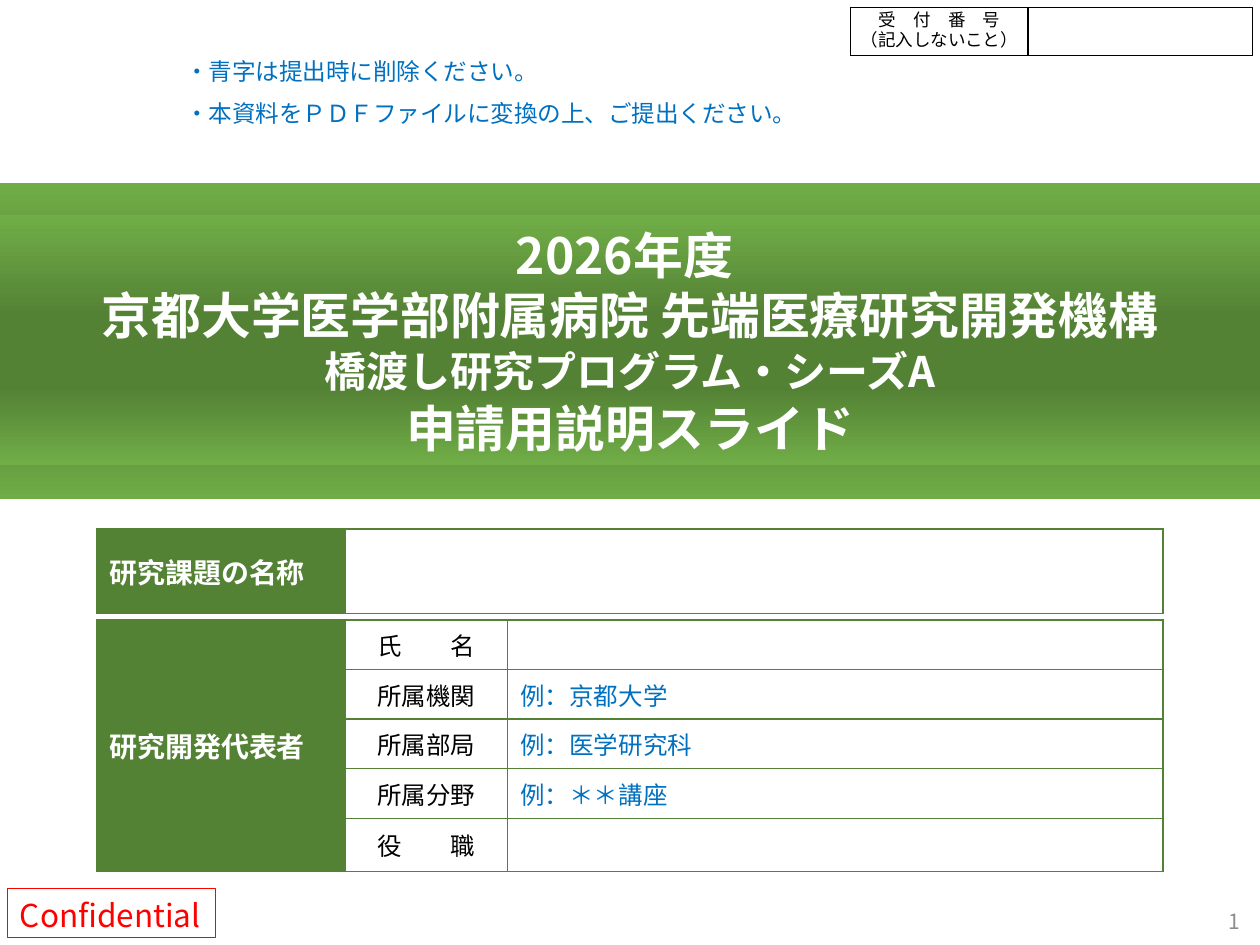
import dataclasses
import lxml.etree
import pptx
import pptx.dml.color
import pptx.enum.shapes
import pptx.enum.text
import pptx.oxml.ns
import pptx.util

ALIGN = pptx.enum.text.PP_ALIGN
MID = pptx.enum.text.MSO_ANCHOR.MIDDLE
TOP = pptx.enum.text.MSO_ANCHOR.TOP
FIXED = pptx.enum.text.MSO_AUTO_SIZE.NONE
BOX = pptx.enum.shapes.MSO_SHAPE.RECTANGLE
NOTO = "Noto Sans CJK JP"
GREEN, LEAF, BLUE = "548235", "70AD47", "0070C0"
WHITE, BLACK, RED, GREY = "FFFFFF", "000000", "FF0000", "8C8C8C"
FADE = [(0, LEAF), (40, GREEN), (69, GREEN), (100, LEAF)]


def tint(code):
    return pptx.dml.color.RGBColor.from_string(code)


def tag(name):
    return pptx.oxml.ns.qn("a:" + name)


def child(node, name, **attrs):
    return lxml.etree.SubElement(node, tag(name), **attrs)


def apply(item, values):
    for key, value in values.items():
        setattr(item, key, value)


def inset(side, top, base=None):
    low = top if base is None else base
    keys = ("margin_left", "margin_right", "margin_top", "margin_bottom")
    sizes = (side, side, top, low)
    return {key: pptx.util.Inches(size) for key, size in zip(keys, sizes)}


@dataclasses.dataclass
class Deck:
    """Draws styled parts on a slide, on a grid of 100 columns by 75 rows."""
    slide: object
    unit: int
    font: str = NOTO

    def span(self, count):
        return round(count * self.unit)

    def place(self, shape, spot):
        keys = ("left", "top", "width", "height")
        apply(shape, dict(zip(keys, map(self.span, spot))))

    def style(self, run, size, color, bold=False, font=None):
        face = font or self.font
        apply(run.font, {"size": pptx.util.Pt(size), "bold": bold, "name": face})
        run.font.color.rgb = tint(color)
        child(run.font._element, "ea", typeface=face)

    def letter(self, frame, lines, look, align=ALIGN.LEFT, lead=None, sizes=()):
        sizes = sizes or [look["size"]] * len(lines)
        for i, (line, size) in enumerate(zip(lines, sizes)):
            para = frame.add_paragraph() if i else frame.paragraphs[0]
            gap = pptx.util.Pt(round(size * lead, 1)) if lead else 1.0
            apply(para, {"alignment": align, "line_spacing": gap,
                         "space_before": 0, "space_after": 0})
            run = para.add_run()
            run.text = line
            self.style(run, **{**look, "size": size})

    def frame(self, shape, wrap, pad, anchor=MID):
        apply(shape.text_frame, {"word_wrap": wrap, "auto_size": FIXED,
                                 "vertical_anchor": anchor, **pad})
        return shape.text_frame

    def fade(self, shape):
        shape.fill.gradient()
        shape.fill.gradient_angle = 270
        stops = next(shape.element.iter(tag("gsLst")))
        stops.clear()
        for share, code in FADE:
            child(child(stops, "gs", pos=str(share * 1000)), "srgbClr", val=code)

    def rect(self, spot):
        shape = self.slide.shapes.add_shape(BOX, *map(self.span, spot))
        shape.shadow.inherit = False
        shape.fill.background()
        shape.line.fill.background()
        return shape

    def band(self, spot):
        self.fade(self.rect(spot))

    def title(self, spot, lines, look, sizes):
        shape = self.slide.shapes.title
        self.slide.shapes.element.append(shape.element)
        self.place(shape, spot)
        self.fade(shape)
        frame = self.frame(shape, True, inset(0.03, 0.03))
        self.letter(frame, lines, look, ALIGN.CENTER, 1.22, sizes)

    def notes(self, spot, lines, look):
        shape = self.slide.placeholders[1]
        self.place(shape, spot)
        frame = self.frame(shape, False, inset(0.1, 0.05), TOP)
        self.letter(frame, lines, look, lead=1.78)
        for para in frame.paragraphs:
            props = para._p.get_or_add_pPr()
            props.attrib.update({"marL": "0", "indent": "0"})
            child(props, "buNone")

    def stamp(self, spot, text, look):
        shape = self.rect(spot)
        shape.line.color.rgb = tint(look["color"])
        shape.line.width = pptx.util.Pt(0.75)
        self.letter(self.frame(shape, False, inset(0.1, 0.08, 0.04)), [text], look)

    def page(self, spot, look):
        shape = self.slide.shapes.add_textbox(*map(self.span, spot))
        frame = self.frame(shape, True, inset(0.1, 0.05))
        self.letter(frame, ["1"], look, ALIGN.RIGHT)
        field = frame.paragraphs[0].runs[0]._r
        field.tag = tag("fld")
        field.attrib.update({"id": "{B6F15528-21DE-4FAA-801E-634DDDAF4B2B}",
                             "type": "slidenum"})

    def edge(self, cell, color):
        props = cell._tc.get_or_add_tcPr()
        for side in "LRTB":
            line = child(props, "ln" + side, w="12700")
            child(child(line, "solidFill"), "srgbClr", val=color)

    def table(self, spot, cols, rows, color):
        form = self.slide.shapes.add_table(rows, len(cols), *map(self.span, spot)).table
        apply(form, {"first_row": False, "horz_banding": False})
        for col, width in zip(form.columns, cols):
            col.width = self.span(width)
        for cell in form.iter_cells():
            self.edge(cell, color)
            cell.fill.background()
            cell.vertical_anchor = MID
            child(cell.text_frame.paragraphs[0]._p, "endParaRPr", sz="1000")
        return form

    def cell(self, cell, lines, look, align=ALIGN.LEFT, fill=None, lead=None, pad=None):
        apply(cell, pad or {})
        if fill:
            cell.fill.solid()
            cell.fill.fore_color.rgb = tint(fill)
        self.letter(cell.text_frame, lines, look, align, lead)


def main():
    show = pptx.Presentation()
    apply(show, {"slide_width": pptx.util.Inches(10), "slide_height": pptx.util.Inches(7.5)})
    slide = show.slides.add_slide(show.slide_layouts[1])
    deck = Deck(slide, show.slide_width // 100)
    head = {"size": 16, "color": WHITE, "bold": True}

    deck.stamp((0.6, 70.5, 16.5, 3.9), "Confidential", {"size": 18, "color": RED})
    deck.page((94.7, 71.7, 4.7, 2.8), {"size": 12, "color": GREY})
    deck.notes((13.7, 2.9, 51.2, 7.3),
               ["・青字は提出時に削除ください。",
                "・本資料をＰＤＦファイルに変換の上、ご提出ください。"],
               {"size": 13.5, "color": BLUE})

    form = deck.table((67.5, 0.6, 31.9, 3.8), (14.1, 17.8), 1, BLACK)
    deck.cell(form.cell(0, 0), ["受　付　番　号", "（記入しないこと）"],
              {"size": 10, "color": BLACK, "font": "Calibri"},
              ALIGN.CENTER, lead=1.1, pad=inset(0.04, 0))

    deck.band((0, 14.5, 100, 25.1))
    deck.title((0, 17.1, 100, 19.8),
               ["2026年度 ", "京都大学医学部附属病院 先端医療研究開発機構",
                "橋渡し研究プログラム・シーズA", "申請用説明スライド"],
               {"size": 28.5, "color": WHITE, "bold": True}, (28.5, 28.5, 24, 28.5))

    people = [("氏　　名", ""), ("所属機関", "例：京都大学"),
              ("所属部局", "例：医学研究科"), ("所属分野", "例：＊＊講座"),
              ("役　　職", "")]
    form = deck.table((7.7, 49.2, 84.6, 19.7), (19.7, 12.9, 52), len(people), GREEN)
    form.cell(0, 0).merge(form.cell(len(people) - 1, 0))
    deck.cell(form.cell(0, 0), ["研究開発代表者"], head, fill=GREEN)
    for row, (label, hint) in enumerate(people):
        deck.cell(form.cell(row, 1), [label], {"size": 14, "color": BLACK}, ALIGN.CENTER)
        if hint:
            deck.cell(form.cell(row, 2), [hint], {"size": 14, "color": BLUE})

    form = deck.table((7.7, 42, 84.6, 6.7), (19.7, 64.9), 1, GREEN)
    deck.cell(form.cell(0, 0), ["研究課題の名称"], head, fill=GREEN)
    show.save("out.pptx")


if __name__ == "__main__":
    main()
